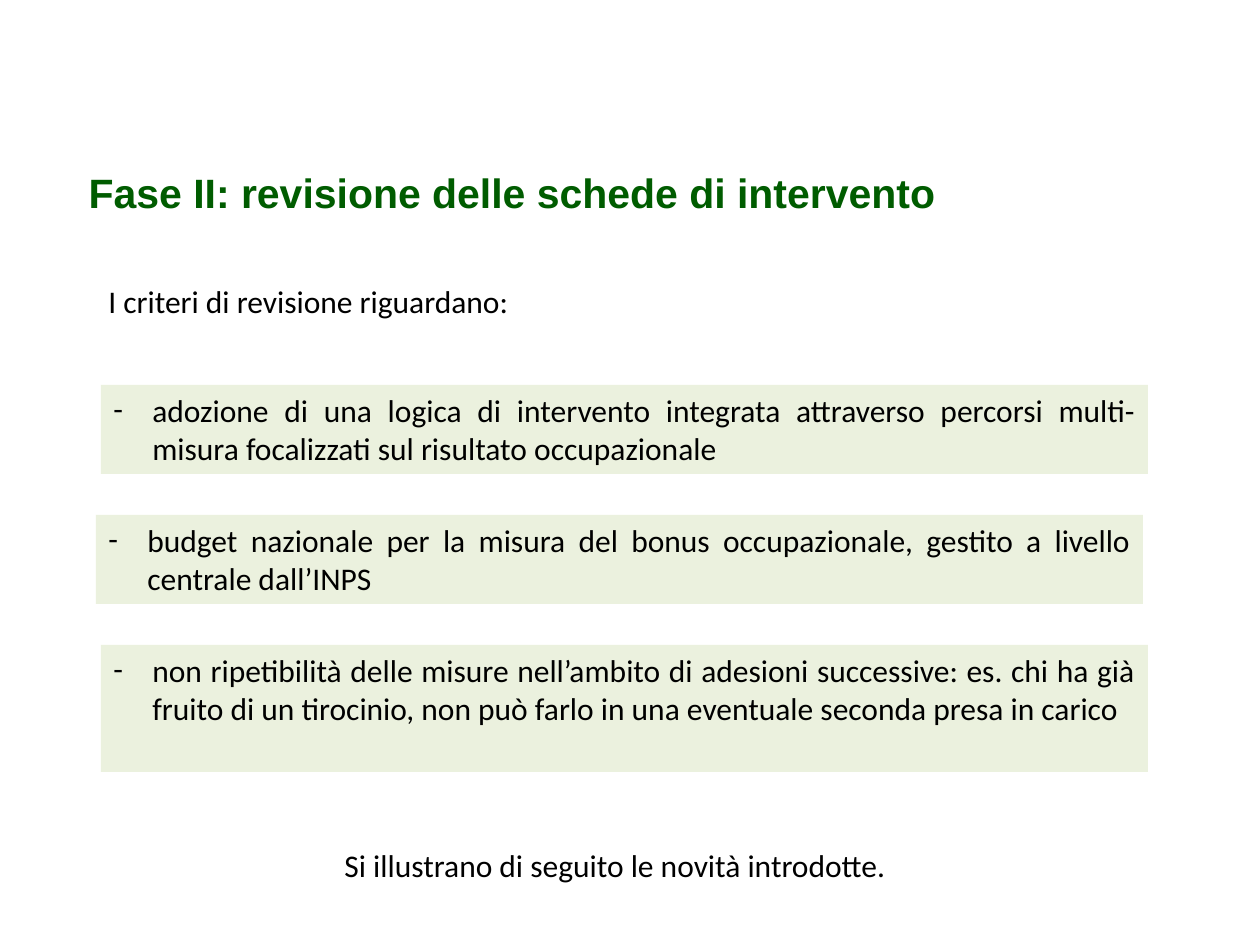
"""Build the slide on the revision criteria of the intervention sheets."""
from lxml import etree
from pptx import Presentation
from pptx.dml.color import RGBColor
from pptx.enum import shapes, text
from pptx.oxml import ns
from pptx.util import Pt

PX = 914400 / 126
INDENT = 39


def px(*lengths):
    return [round(length * PX) for length in lengths]


def style(paragraph, size, font, color, bold=False, align=text.PP_ALIGN.LEFT):
    paragraph.alignment = align
    for run in paragraph.runs:
        run.font.size = Pt(size)
        run.font.name = font
        run.font.bold = bold
        run.font.color.rgb = RGBColor.from_string(color)


presentation = Presentation()
presentation.slide_width, presentation.slide_height = px(1260, 945)
slide = presentation.slides.add_slide(presentation.slide_layouts[5])

title = slide.shapes.title
title.left, title.top, title.width, title.height = px(76, 160, 1134, 64)
title.text_frame.text = "Fase II: revisione delle schede di intervento"
title.text_frame.vertical_anchor = text.MSO_ANCHOR.MIDDLE
style(title.text_frame.paragraphs[0], 23.4, "Arial", "005C00", bold=True)

intro = slide.shapes.add_textbox(*px(96, 237, 1056, 89))
intro.text_frame.word_wrap = True
intro.text_frame.vertical_anchor = text.MSO_ANCHOR.BOTTOM
intro.text_frame.text = "I criteri di revisione riguardano:"
style(intro.text_frame.paragraphs[0], 18, "Calibri", "000000", align=text.PP_ALIGN.JUSTIFY)

criteria = [
    (101, 385, 89, "adozione di una logica di intervento integrata attraverso percorsi "
                   "multi-misura focalizzati sul risultato occupazionale"),
    (96, 515, 89, "budget nazionale per la misura del bonus occupazionale, gestito a "
                  "livello centrale dall’INPS"),
    (101, 645, 127, "non ripetibilità delle misure nell’ambito di adesioni successive: es. chi ha già "
                    "fruito di un tirocinio, non può farlo in una eventuale seconda presa in carico"),
]
for left, top, height, wording in criteria:
    box = slide.shapes.add_shape(shapes.MSO_SHAPE.RECTANGLE, *px(left, top, 1047, height))
    box.shadow.inherit = False
    box.fill.solid()
    box.fill.fore_color.rgb = RGBColor.from_string("EBF1DE")
    box.line.fill.background()
    box.text_frame.word_wrap = True
    box.text_frame.vertical_anchor = text.MSO_ANCHOR.TOP
    box.text_frame.text = wording
    paragraph = box.text_frame.paragraphs[0]
    properties = paragraph._p.get_or_add_pPr()
    indent = px(INDENT)[0]
    properties.set("marL", str(indent))
    properties.set("indent", str(-indent))
    etree.SubElement(properties, ns.qn("a:buFont"), typeface="Calibri")
    etree.SubElement(properties, ns.qn("a:buChar"), char="-")
    style(paragraph, 18, "Calibri", "000000", align=text.PP_ALIGN.JUSTIFY)

closing = slide.shapes.add_textbox(*px(332, 840, 621, 51))
closing.text_frame.word_wrap = False
closing.text_frame.text = "Si illustrano di seguito le novità introdotte."
style(closing.text_frame.paragraphs[0], 18, "Calibri", "000000")

presentation.save("out.pptx")
